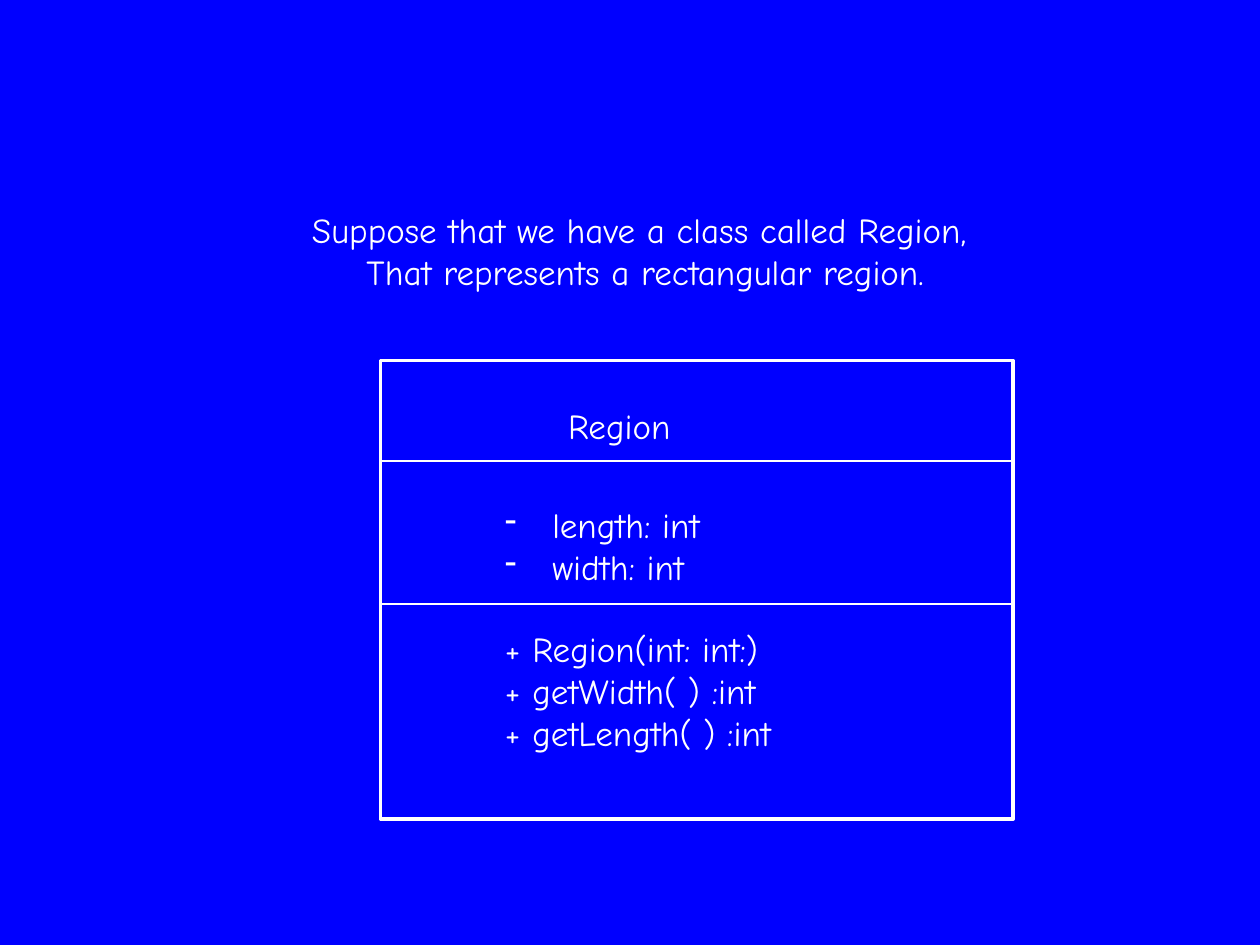
from lxml import etree
from pptx import Presentation
from pptx.dml.color import RGBColor
from pptx.enum import shapes, text
from pptx.oxml import ns
from pptx.util import Pt

BLUE = RGBColor(0x00, 0x00, 0xFF)
WHITE = RGBColor(0xFF, 0xFF, 0xFF)
FONT = "Comic Neue"
INTRO = ["Suppose that we have a class called Region, ",
         "That represents a rectangular region."]
NAME = ["Region"]
FIELDS = ["length: int", "width: int"]
METHODS = ["+ Region(int: int:)", "+ getWidth( ) :int", "+ getLength( ) :int"]

LEFT, TOP, WIDTH, HEIGHT = 217.5, 206, 361.5, 262
DIVIDERS = [263.5, 345]
MEMBER_LEFT = 281.5
INDENT = 27


def add_text(s, lines, left, top, width, height, align=text.PP_ALIGN.LEFT, bullet=None):
    tf = s.shapes.add_textbox(Pt(left), Pt(top), Pt(width), Pt(height)).text_frame
    tf.word_wrap = False
    tf.auto_size = text.MSO_AUTO_SIZE.SHAPE_TO_FIT_TEXT
    for i, line in enumerate(lines):
        p = tf.paragraphs[0] if i == 0 else tf.add_paragraph()
        p.alignment = align
        if bullet:
            pPr = p._p.get_or_add_pPr()
            pPr.set("marL", str(Pt(INDENT)))
            pPr.set("indent", str(-Pt(INDENT)))
            etree.SubElement(pPr, ns.qn("a:buChar"), char=bullet)
        r = p.add_run()
        r.text = line
        r.font.name = FONT
        r.font.size = Pt(20)
        r.font.color.rgb = WHITE


def add_divider(s, y):
    line = s.shapes.add_connector(shapes.MSO_CONNECTOR.STRAIGHT,
                                  Pt(LEFT), Pt(y), Pt(LEFT + WIDTH), Pt(y))
    line.line.color.rgb = WHITE
    line.line.width = Pt(1)
    etree.SubElement(line._element.spPr, ns.qn("a:effectLst"))


def main():
    prs = Presentation()
    prs.slide_width, prs.slide_height = Pt(720), Pt(540)
    s = prs.slides.add_slide(prs.slide_layouts[6])
    s.background.fill.solid()
    s.background.fill.fore_color.rgb = BLUE

    add_text(s, INTRO, 155, 115.5, 427.5, 55.5, align=text.PP_ALIGN.CENTER)
    add_text(s, NAME, 317.5, 227.5, 76, 31.5)
    add_text(s, FIELDS, MEMBER_LEFT, 284, 139, 55.5, bullet="-")
    add_text(s, METHODS, MEMBER_LEFT, 355, 185, 80)

    sp = s.shapes.add_shape(shapes.MSO_SHAPE.RECTANGLE,
                            Pt(LEFT), Pt(TOP), Pt(WIDTH), Pt(HEIGHT))
    sp.shadow.inherit = False
    sp.fill.background()
    sp.line.color.rgb = WHITE
    sp.line.width = Pt(2)
    for y in DIVIDERS:
        add_divider(s, y)

    prs.save("out.pptx")


if __name__ == "__main__":
    main()
